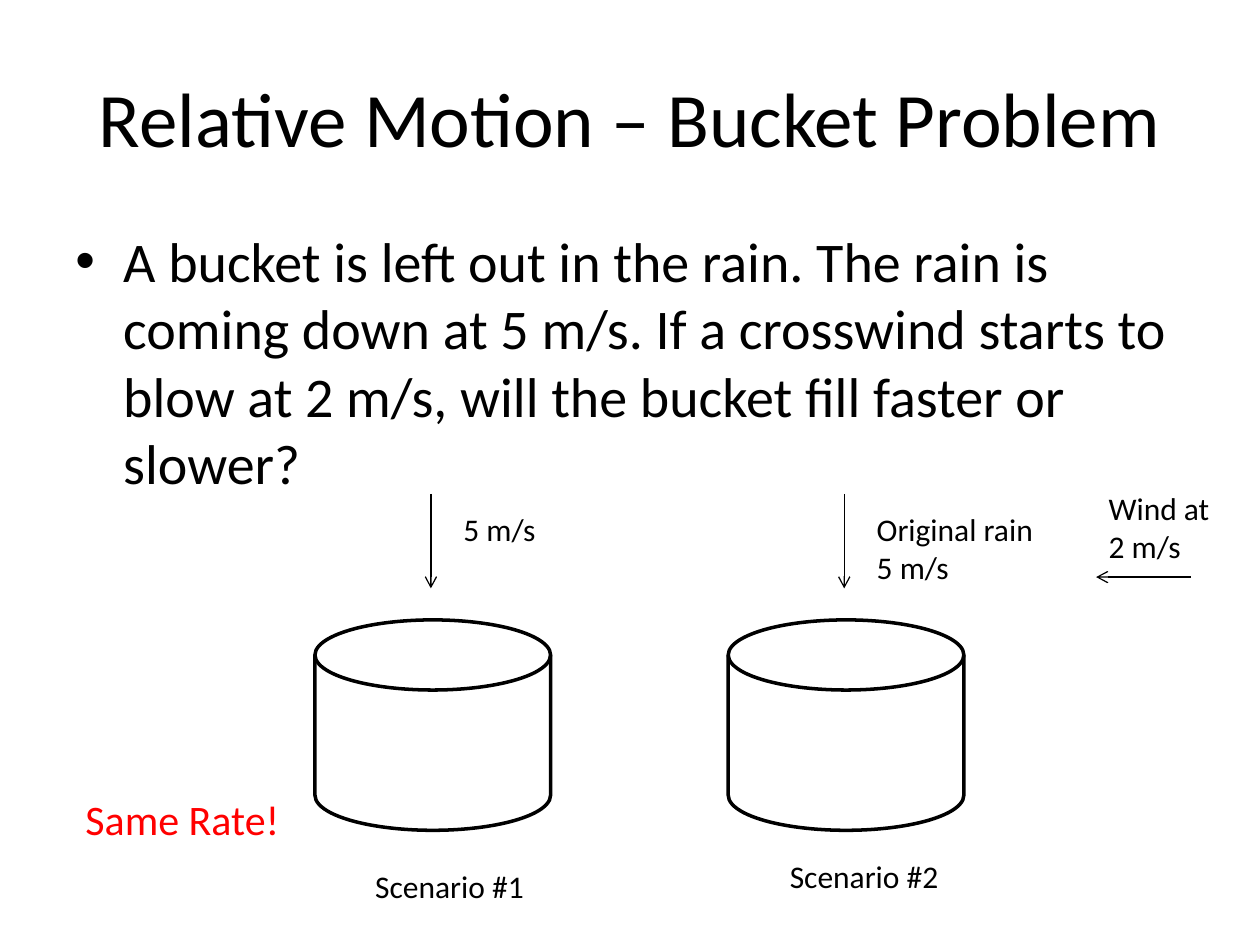
from pptx import Presentation
from pptx.dml.color import RGBColor
from pptx.enum.shapes import MSO_CONNECTOR, MSO_SHAPE
from pptx.enum.text import MSO_ANCHOR, PP_ALIGN
from pptx.oxml.ns import qn
from pptx.util import Inches, Pt
from lxml.etree import SubElement

BLACK = RGBColor(0x00, 0x00, 0x00)
WHITE = RGBColor(0xFF, 0xFF, 0xFF)
RED = RGBColor(0xFF, 0x00, 0x00)
FONT = "Calibri"


def add_text(slide, box, lines, size=18, color=BLACK, wrap=False):
    """Add one paragraph per line and return the text frame."""
    frame = slide.shapes.add_textbox(*map(Inches, box)).text_frame
    frame.word_wrap = wrap
    frame.text = "\n".join(lines)
    for paragraph in frame.paragraphs:
        paragraph.font.name = FONT
        paragraph.font.size = Pt(size)
        paragraph.font.color.rgb = color
    return frame


def add_arrow(slide, start, end):
    """Draw a thin open-headed arrow from start to end."""
    arrow = slide.shapes.add_connector(
        MSO_CONNECTOR.STRAIGHT, *map(Inches, (*start, *end)))
    arrow.line.color.rgb = BLACK
    arrow.line.width = Pt(0.75)
    properties = arrow._element.spPr
    SubElement(properties.find(qn("a:ln")), qn("a:tailEnd"), type="arrow")
    SubElement(properties, qn("a:effectLst"))


def add_title(slide, box, title):
    """Place the centred slide title."""
    frame = add_text(slide, box, [title], size=44, wrap=True)
    frame.vertical_anchor = MSO_ANCHOR.MIDDLE
    frame.paragraphs[0].alignment = PP_ALIGN.CENTER


def add_question(slide, box, question):
    """Place the bulleted question with a hanging indent."""
    frame = add_text(slide, box, [question], size=32, wrap=True)
    paragraph = frame.paragraphs[0]
    paragraph.space_before = Pt(3)
    properties = paragraph._p.get_or_add_pPr()
    properties.set("marL", str(Inches(0.38)))
    properties.set("indent", str(Inches(-0.38)))
    bullet_font = SubElement(properties, qn("a:buFont"), typeface="Arial")
    bullet_font.addnext(properties.makeelement(qn("a:buChar"), {"char": "•"}))


def add_scenario(slide, box, rain_box, rain_lines, caption_box, caption):
    """Draw a bucket with falling rain above and a caption below."""
    left, top, width, height = box
    bucket = slide.shapes.add_shape(
        MSO_SHAPE.FLOWCHART_MAGNETIC_DISK, *map(Inches, box))
    bucket.shadow.inherit = False
    bucket.fill.solid()
    bucket.fill.fore_color.rgb = WHITE
    bucket.line.color.rgb = BLACK
    bucket.line.width = Pt(2)
    rain_x = left + 0.92
    add_arrow(slide, (rain_x, top - 1), (rain_x, top - 0.25))
    add_text(slide, rain_box, rain_lines)
    add_text(slide, caption_box, [caption])


def add_wind(slide, box, lines):
    """Label the crosswind above an arrow pointing left."""
    left, top, width, height = box
    add_text(slide, box, lines)
    add_arrow(slide, (left + 0.75, top + 0.75), (left, top + 0.75))


def main():
    """Build and save the bucket problem slide."""
    deck = Presentation()
    deck.slide_width, deck.slide_height = Inches(10), Inches(7.5)
    slide = deck.slides.add_slide(deck.slide_layouts[6])
    add_title(slide, (0.5, 0.3, 9, 1.25), "Relative Motion – Bucket Problem")
    add_question(
        slide, (0.5, 1.75, 9, 4.95),
        "A bucket is left out in the rain. The rain is coming down at 5 m/s. "
        "If a crosswind starts to blow at 2 m/s, will the bucket fill faster "
        "or slower?")
    add_scenario(slide, (2.5, 4.92, 1.87, 1.67),
                 (3.58, 4, 0.8, 0.4), ["5 m/s"],
                 (2.88, 6.83, 1.4, 0.4), "Scenario #1")
    add_scenario(slide, (5.78, 4.92, 1.87, 1.67),
                 (6.86, 4, 1.46, 0.71), ["Original rain", "5 m/s"],
                 (6.17, 6.75, 1.4, 0.4), "Scenario #2")
    add_wind(slide, (8.7, 3.83, 1.01, 0.71), ["Wind at", "2 m/s"])
    add_text(slide, (0.58, 6.25, 1.76, 0.5), ["Same Rate!"], 24, RED)
    deck.save("out.pptx")


if __name__ == "__main__":
    main()
